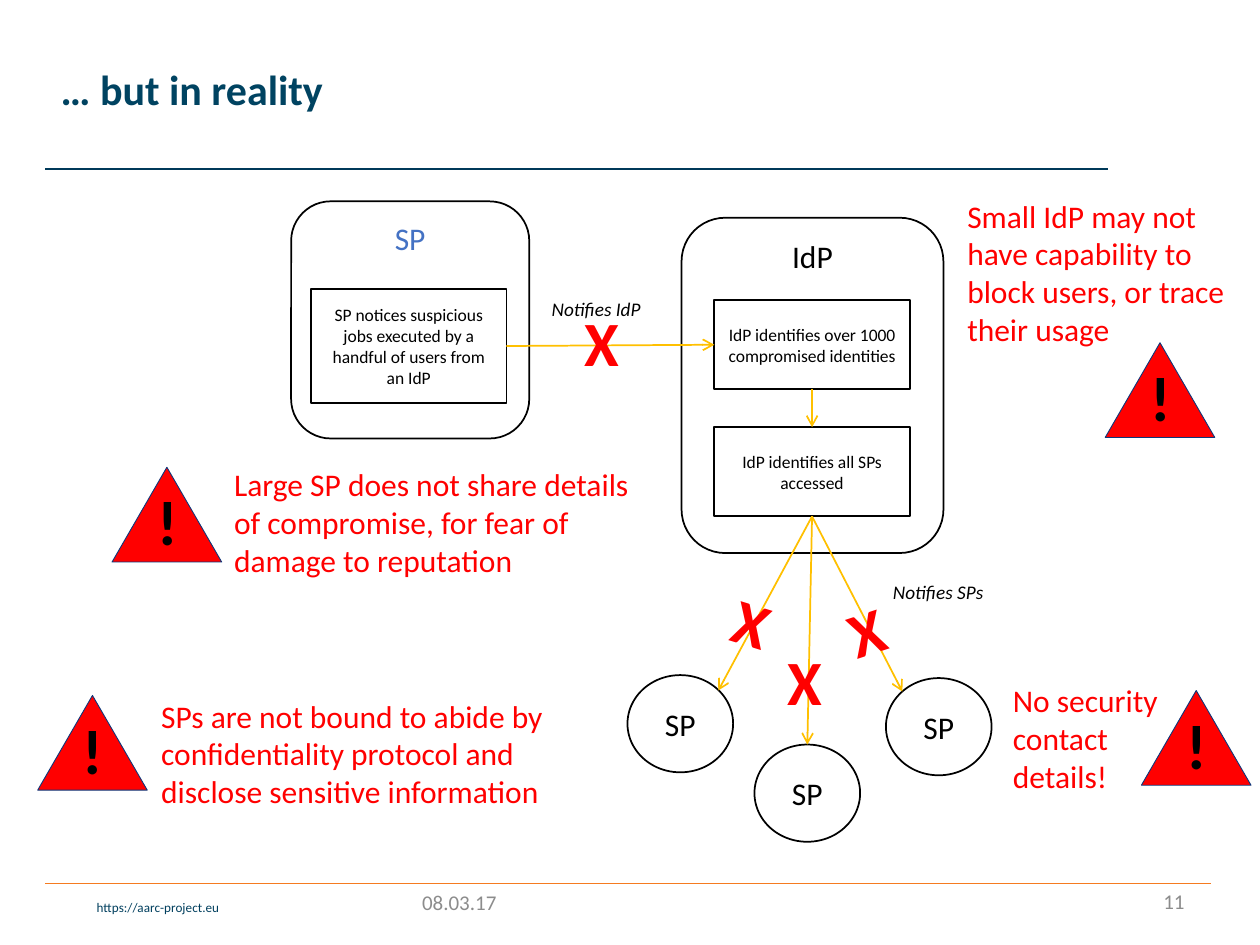
import pptx
import pptx.util
import pptx.dml.color
import pptx.enum.shapes
import pptx.enum.text
import pptx.oxml.ns
import lxml.etree

Cm = pptx.util.Cm
SHAPE = pptx.enum.shapes.MSO_SHAPE
ALIGN = pptx.enum.text.PP_ALIGN
ANCHOR = pptx.enum.text.MSO_ANCHOR
AUTO_SIZE = pptx.enum.text.MSO_AUTO_SIZE

FONT = "Calibri"
BLACK, WHITE, RED = "000000", "FFFFFF", "FF0000"
NAVY, GREY, BLUE = "004361", "8C8C8C", "4472C4"
TOP, LEFT, BOTTOM, RIGHT = range(4)


def rgb(color):
    return pptx.dml.color.RGBColor.from_string(color)


def lengths(box):
    return [Cm(value) for value in box]


def write(shape, text, size, color, align=ALIGN.LEFT, anchor=ANCHOR.TOP,
          bold=False, italic=False, wrap=True):
    frame = shape.text_frame
    frame.word_wrap = wrap
    frame.auto_size = AUTO_SIZE.NONE
    frame.vertical_anchor = anchor
    paragraph = frame.paragraphs[0]
    paragraph.alignment = align
    run = paragraph.add_run()
    run.text = text
    run.font.name = FONT
    run.font.size = pptx.util.Pt(size)
    run.font.bold = bold
    run.font.italic = italic
    run.font.color.rgb = rgb(color)
    return paragraph


def add_text(shapes, box, text, size, color, **options):
    shape = shapes.add_textbox(*lengths(box))
    write(shape, text, size, color, **options)
    return shape


def add_outline(shapes, kind, box, fill=WHITE, line=BLACK, width=1):
    shape = shapes.add_shape(kind, *lengths(box))
    shape.shadow.inherit = False
    shape.fill.solid()
    shape.fill.fore_color.rgb = rgb(fill)
    shape.line.color.rgb = rgb(line)
    shape.line.width = pptx.util.Pt(width)
    return shape


def add_node(shapes, kind, box, text, size, color=BLACK, anchor=ANCHOR.MIDDLE):
    shape = add_outline(shapes, kind, box)
    write(shape, text, size, color, align=ALIGN.CENTER, anchor=anchor)
    return shape


def add_line(shapes, start, end, color):
    line = shapes.add_connector(
        pptx.enum.shapes.MSO_CONNECTOR.STRAIGHT, *lengths(start + end))
    line.line.color.rgb = rgb(color)
    line.line.width = pptx.util.Pt(1)
    lxml.etree.SubElement(line._element.spPr, pptx.oxml.ns.qn("a:effectLst"))
    return line


def add_arrow(shapes, source, source_side, end=(0, 0), target=None, target_side=TOP):
    """Arrow from a side of source to a target's side, or to a free end point."""
    arrow = add_line(shapes, (0, 0), end, "FFC000")
    arrow.begin_connect(source, source_side)
    if target is not None:
        arrow.end_connect(target, target_side)
    head = lxml.etree.SubElement(arrow.line._get_or_add_ln(),
                                 pptx.oxml.ns.qn("a:tailEnd"))
    head.set("type", "arrow")


def add_warning(shapes, left, top):
    group = shapes.add_group_shape()
    add_outline(group.shapes, SHAPE.ISOSCELES_TRIANGLE, (left, top, 2.21, 1.91),
                RED, "0C377B", 0.5)
    add_text(group.shapes, (left + 0.66, top + 0.19, 0.94, 1.8), "!", 36, BLACK,
             bold=True)


def add_frame(slide):
    """Title, rules and footer."""
    shapes = slide.shapes
    add_line(shapes, (0.91, 17.81), (24.41, 17.81), "F57B20")
    add_line(shapes, (22.33, 3.4), (0.91, 3.4), "003959")
    title = shapes.title
    title.left, title.top, title.width, title.height = lengths(
        (0.97, 0.56, 18.85, 2.57))
    paragraph = write(title, "… but in reality", 24, NAVY,
                      anchor=ANCHOR.MIDDLE, bold=True)
    paragraph.line_spacing = 0.9
    add_text(shapes, (0.89, 18.01, 3.78, 0.58), "https://aarc-project.eu", 7.5,
             "003F5E", align=ALIGN.RIGHT)
    add_text(shapes, (8.26, 17.68, 5.92, 1.02), "08.03.17", 12, GREY,
             anchor=ANCHOR.MIDDLE)
    add_text(shapes, (22.73, 17.65, 1.4, 1.02), "11", 12, GREY,
             align=ALIGN.RIGHT, anchor=ANCHOR.MIDDLE)


def add_flow(shapes):
    # Organisations
    add_node(shapes, SHAPE.ROUNDED_RECTANGLE, (13.74, 4.39, 5.28, 6.76),
             "IdP", 18, anchor=ANCHOR.TOP)
    add_node(shapes, SHAPE.ROUNDED_RECTANGLE, (5.87, 4.06, 4.8, 4.78),
             "SP", 18, BLUE, ANCHOR.TOP)

    # Steps
    notice, identify, access = [
        add_node(shapes, SHAPE.FLOWCHART_PROCESS, (left, top, 3.94, height), text, 10)
        for left, top, height, text in (
            (6.27, 5.82, 2.31, "SP notices suspicious jobs executed by a "
                               "handful of users from an IdP"),
            (14.4, 6.05, 1.8, "IdP identifies over 1000 compromised identities"),
            (14.4, 8.61, 1.8, "IdP identifies all SPs accessed"))]

    # Notified service providers
    circles = [
        add_node(shapes, SHAPE.OVAL, (left, top, 2.13, 1.96), "SP", 18)
        for left, top in ((12.65, 13.61), (15.21, 15.01), (17.86, 13.67))]

    # Arrows
    add_arrow(shapes, notice, RIGHT, target=identify, target_side=LEFT)
    add_arrow(shapes, identify, BOTTOM, target=access)
    add_arrow(shapes, access, BOTTOM, end=(14.48, 13.92))
    add_arrow(shapes, access, BOTTOM, target=circles[1])
    add_arrow(shapes, access, BOTTOM, end=(18.19, 13.94))

    # Arrow labels
    for left, top, text in ((10.87, 5.87, "Notifies IdP"),
                            (17.75, 11.58, "Notifies SPs")):
        add_text(shapes, (left, top, 2.42, 0.74), text, 11, BLACK,
                 italic=True, wrap=False)


def add_problems(shapes):
    # Red comments
    for box, text in (
            ((4.47, 9.25, 8.48, 2.57), "Large SP does not share details of "
             "compromise, for fear of damage to reputation"),
            ((19.25, 3.84, 5.82, 3.33), "Small IdP may not have capability to "
             "block users, or trace their usage"),
            ((3, 13.92, 9.14, 2.57), "SPs are not bound to abide by "
             "confidentiality protocol and disclose sensitive information"),
            ((20.17, 13.61, 3.73, 2.57), "No security contact details!")):
        add_text(shapes, box, text, 18, RED)

    # Warning signs
    for left, top in ((2.26, 9.42), (0.76, 14.02), (22.28, 6.91), (23.01, 13.92)):
        add_warning(shapes, left, top)

    # Crosses on the broken arrows
    for left, top, angle in ((11.53, 5.99, 0), (14.58, 11.61, 17),
                             (15.62, 12.83, 0), (16.87, 11.86, 341.7)):
        cross = add_text(shapes, (left, top, 0.94, 1.8), "X", 36, RED, bold=True)
        cross.rotation = angle


def main():
    presentation = pptx.Presentation()
    presentation.slide_width = Cm(25.4)
    presentation.slide_height = Cm(19.05)
    slide = presentation.slides.add_slide(presentation.slide_layouts[5])
    add_frame(slide)
    add_flow(slide.shapes)
    add_problems(slide.shapes)
    presentation.save("out.pptx")


if __name__ == "__main__":
    main()
